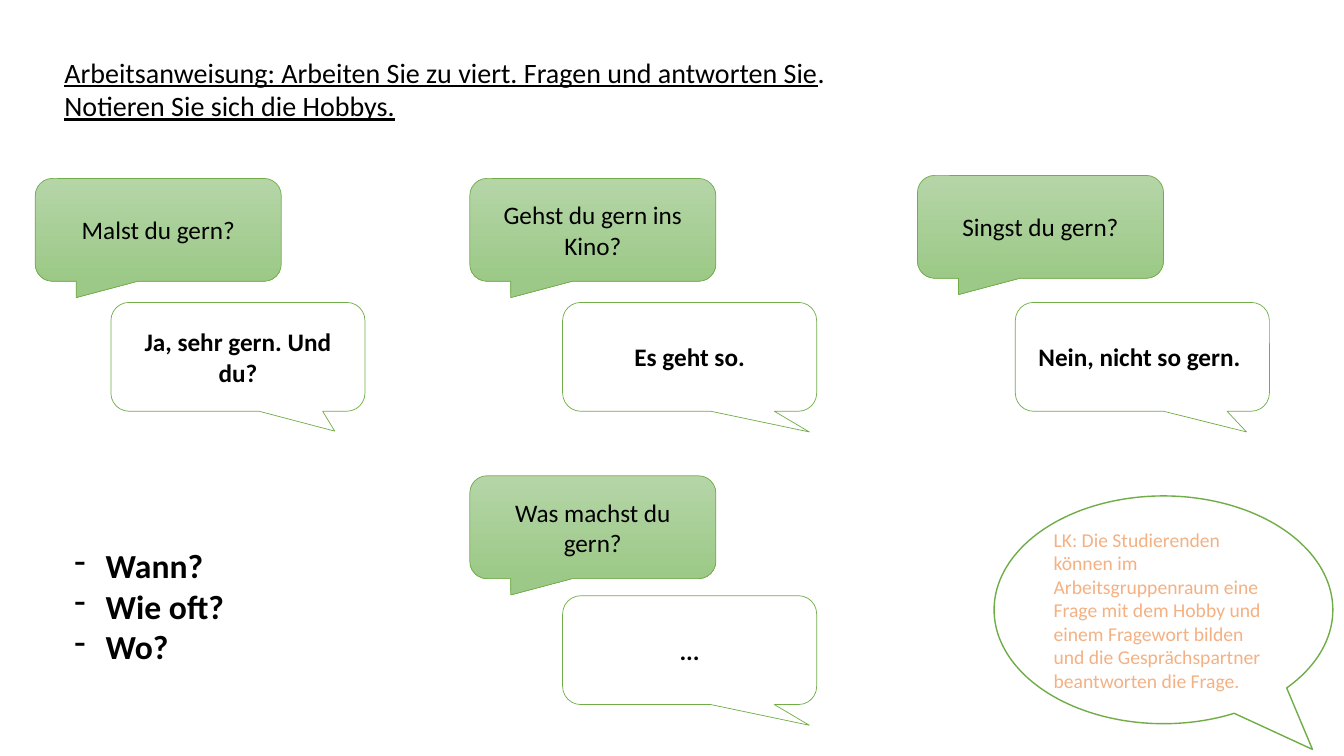
from typing import NamedTuple

import lxml.etree
import pptx
import pptx.dml.color
import pptx.enum.shapes
import pptx.enum.text
import pptx.oxml.ns
import pptx.util

Inches = pptx.util.Inches
Pt = pptx.util.Pt
Shapes = pptx.enum.shapes.MSO_SHAPE
Align = pptx.enum.text.PP_ALIGN

FONT = "Calibri"
COLORS = {
    "text": "000000",
    "note": "F4B183",
    "outline": "70AD47",
    "white": "FFFFFF",
    "green_top": "B5D5A7",
    "green_bottom": "9CC987",
}


class Bubble(NamedTuple):
    text: str
    left: float
    top: float
    width: float
    height: float
    tail: tuple[float, ...]
    kind: Shapes = Shapes.ROUNDED_RECTANGULAR_CALLOUT
    shaded: bool = False
    bold: bool = False
    size: int = 18
    color: str = "text"
    line_width: float = 0.5
    align: Align = Align.CENTER


def question(text: str, left: float, top: float) -> Bubble:
    return Bubble(text, left, top, 2.44, 1.02, (-0.333, 0.659, 0.167), shaded=True)


def answer(text: str, left: float, top: float, tail_x: float = 0.471, tail_y: float = 0.69) -> Bubble:
    return Bubble(text, left, top, 2.52, 1.08, (tail_x, tail_y, 0.167), bold=True)


BUBBLES = [
    question("Malst du gern?", 0.35, 1.77),
    question("Gehst du gern ins Kino?", 4.66, 1.77),
    question("Singst du gern?", 9.1, 1.74),
    answer("Ja, sehr gern. Und du?", 1.1, 3, 0.381, 0.683),
    answer("Es geht so.", 5.58, 3),
    answer("Nein, nicht so gern. ", 10.07, 3, 0.41),
    question("Was machst du gern?", 4.66, 4.72),
    answer("...", 5.58, 5.91),
    Bubble(
        "LK: Die Studierenden können im Arbeitsgruppenraum eine Frage mit dem Hobby und "
        "einem Fragewort bilden und die Gesprächspartner beantworten die Frage.",
        9.86, 4.92, 3.36, 2.26, (0.44, 0.613), kind=Shapes.OVAL_CALLOUT,
        size=14, color="note", line_width=1, align=Align.LEFT,
    ),
]

INSTRUCTION = [
    ("Arbeitsanweisung: Arbeiten Sie zu viert. Fragen und antworten Sie", True),
    (". ", False),
    ("Notieren Sie sich die Hobbys.", True),
]
QUESTION_WORDS = ["Wann?", "Wie oft?", "Wo?"]


def rgb(name: str) -> pptx.dml.color.RGBColor:
    return pptx.dml.color.RGBColor.from_string(COLORS[name])


def style_font(font, size: int, bold: bool = False, color: str = "text") -> None:
    font.name = FONT
    font.size = Pt(size)
    font.bold = bold
    font.color.rgb = rgb(color)


def shade_green(fill) -> None:
    """Fill with green that deepens from top to bottom."""
    fill.gradient()
    fill.gradient_angle = 270
    for stop, name in zip(fill.gradient_stops, ("green_top", "green_bottom")):
        stop.color.rgb = rgb(name)


def add_bubble(slide, bubble: Bubble) -> None:
    shape = slide.shapes.add_shape(
        bubble.kind, Inches(bubble.left), Inches(bubble.top), Inches(bubble.width), Inches(bubble.height)
    )
    shape.shadow.inherit = False
    for index, value in enumerate(bubble.tail):
        shape.adjustments[index] = value
    if bubble.shaded:
        shade_green(shape.fill)
    else:
        shape.fill.solid()
        shape.fill.fore_color.rgb = rgb("white")
    shape.line.color.rgb = rgb("outline")
    shape.line.width = Pt(bubble.line_width)

    text_frame = shape.text_frame
    text_frame.text = bubble.text
    text_frame.word_wrap = True
    text_frame.vertical_anchor = pptx.enum.text.MSO_ANCHOR.MIDDLE
    paragraph = text_frame.paragraphs[0]
    paragraph.alignment = bubble.align
    style_font(paragraph.runs[0].font, bubble.size, bubble.bold, bubble.color)


def add_text_frame(slide, left: float, top: float, width: float, height: float):
    box = slide.shapes.add_textbox(Inches(left), Inches(top), Inches(width), Inches(height))
    box.text_frame.word_wrap = True
    box.text_frame.auto_size = pptx.enum.text.MSO_AUTO_SIZE.SHAPE_TO_FIT_TEXT
    return box.text_frame


def add_instruction(slide) -> None:
    paragraph = add_text_frame(slide, 0.54, 0.5, 7.82, 0.77).paragraphs[0]
    for text, underlined in INSTRUCTION:
        run = paragraph.add_run()
        run.text = text
        style_font(run.font, 20)
        run.font.underline = underlined


def add_dash(paragraph, indent: float) -> None:
    properties = paragraph._p.get_or_add_pPr()
    properties.set("marL", str(Inches(indent)))
    properties.set("indent", str(-Inches(indent)))
    bullet = lxml.etree.SubElement(properties, pptx.oxml.ns.qn("a:buChar"))
    bullet.set("char", "-")


def add_question_words(slide) -> None:
    text_frame = add_text_frame(slide, 0.64, 5.36, 2.98, 1.31)
    text_frame.text = "\n".join(QUESTION_WORDS)
    for paragraph in text_frame.paragraphs:
        add_dash(paragraph, 0.31)
        style_font(paragraph.runs[0].font, 24, bold=True)


def main() -> None:
    presentation = pptx.Presentation()
    presentation.slide_width = Inches(13.33)
    presentation.slide_height = Inches(7.5)
    slide = presentation.slides.add_slide(presentation.slide_layouts[6])
    add_instruction(slide)
    for bubble in BUBBLES:
        add_bubble(slide, bubble)
    add_question_words(slide)
    presentation.save("out.pptx")


if __name__ == "__main__":
    main()
